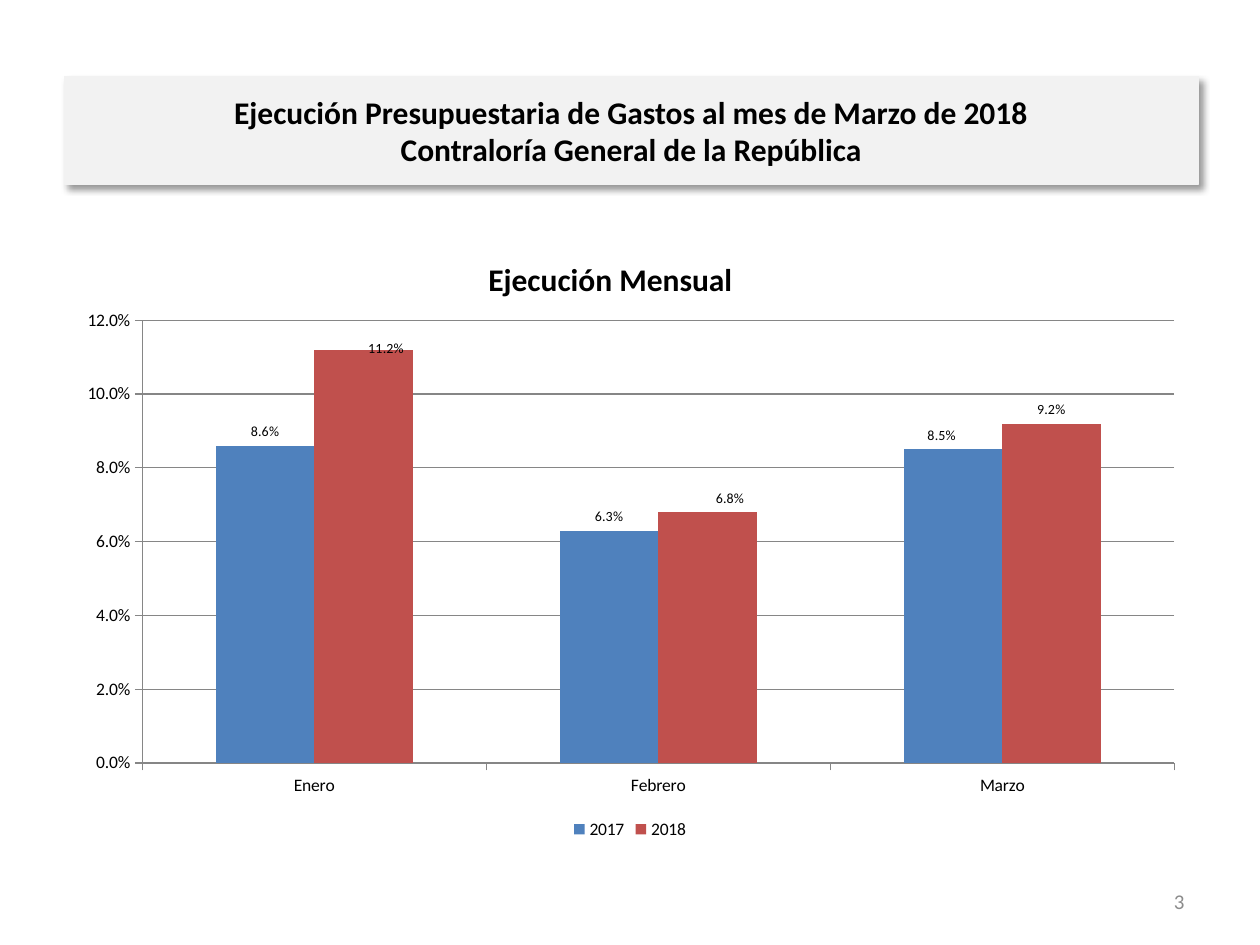
from dataclasses import dataclass, field

from lxml import etree
from pptx import Presentation
from pptx.chart.data import CategoryChartData
from pptx.dml.color import RGBColor
from pptx.enum import chart as ch, text
from pptx.oxml import parse_xml
from pptx.oxml.ns import nsdecls, qn
from pptx.util import Inches, Pt

FONT = "Calibri"
PERCENT = "0.0%"
BLACK = RGBColor(0x00, 0x00, 0x00)
GRAY = RGBColor(0x8C, 0x8C, 0x8C)
AXIS_GRAY = RGBColor(0x86, 0x86, 0x86)
PANEL = RGBColor(0xF2, 0xF2, 0xF2)
BLUE = RGBColor(0x4F, 0x81, 0xBD)
RED = RGBColor(0xC0, 0x50, 0x4D)
MONTHS = ["Enero", "Febrero", "Marzo"]


@dataclass
class YearSeries:
    name: str
    values: list[float]
    color: RGBColor
    label_shifts: dict[int, tuple[float, float]] = field(default_factory=dict)


YEARS = [
    YearSeries("2017", [0.086, 0.063, 0.085], BLUE, {2: (-0.01, 0)}),
    YearSeries("2018", [0.112, 0.068, 0.092], RED,
               {0: (0.02, 0.02), 1: (0.02, 0)}),
]


def style_font(font, size: float, color: RGBColor = BLACK, bold: bool = False) -> None:
    font.name = FONT
    font.size = Pt(size)
    font.bold = bold
    font.color.rgb = color


def manual_layout(**values):
    """Chart layout in fractions of the chart area."""
    layout = etree.Element(qn("c:layout"))
    manual = etree.SubElement(layout, qn("c:manualLayout"))
    for tag, value in values.items():
        etree.SubElement(manual, qn(f"c:{tag}")).set("val", str(value))
    return layout


def add_title(slide) -> None:
    sp = slide.shapes.title
    sp.left, sp.top, sp.width, sp.height = map(Inches, (0.51, 0.61, 9, 0.85))
    sp.fill.solid()
    sp.fill.fore_color.rgb = PANEL
    sp.line.color.rgb = PANEL
    sp.line.width = Pt(0.75)
    sp._element.spPr.append(parse_xml(
        f'<a:effectLst {nsdecls("a")}><a:outerShdw blurRad="{Pt(4)}" dist="{Pt(3)}" '
        'dir="2700000" algn="tl" rotWithShape="0"><a:srgbClr val="000000">'
        '<a:alpha val="40000"/></a:srgbClr></a:outerShdw></a:effectLst>'))
    tf = sp.text_frame
    tf.text = ("Ejecución Presupuestaria de Gastos al mes de Marzo de 2018\v"
               "Contraloría General de la República")
    tf.word_wrap = True
    tf.auto_size = text.MSO_AUTO_SIZE.NONE
    tf.vertical_anchor = text.MSO_ANCHOR.MIDDLE
    p = tf.paragraphs[0]
    p.alignment = text.PP_ALIGN.CENTER
    style_font(p.font, 18, bold=True)


def style_series(series, year: YearSeries) -> None:
    series.format.fill.solid()
    series.format.fill.fore_color.rgb = year.color
    series.invert_if_negative = False
    labels = series.data_labels
    labels.show_value = True
    labels.number_format = PERCENT
    labels.number_format_is_linked = False
    labels.position = ch.XL_LABEL_POSITION.OUTSIDE_END
    style_font(labels.font, 8)
    for i, (x, y) in year.label_shifts.items():
        label = series.points[i].data_label
        label.position = ch.XL_LABEL_POSITION.OUTSIDE_END
        style_font(label.font, 8)
        idx = labels._element.xpath(f"c:dLbl/c:idx[@val='{i}']")[0]
        idx.addnext(parse_xml(
            f'<c:numFmt {nsdecls("c")} formatCode="{PERCENT}" sourceLinked="0"/>'))
        idx.addnext(manual_layout(x=x, y=y))


def add_chart(slide) -> None:
    data = CategoryChartData(number_format=PERCENT)
    data.categories = MONTHS
    for year in YEARS:
        data.add_series(year.name, year.values)
    chart = slide.shapes.add_chart(
        ch.XL_CHART_TYPE.COLUMN_CLUSTERED, Inches(0.5), Inches(1.75),
        Inches(9), Inches(4.95), data).chart
    style_font(chart.font, 10)

    chart.has_title = True
    title = chart.chart_title
    title.text_frame.text = "Ejecución Mensual"
    style_font(title.text_frame.paragraphs[0].font, 18, bold=True)
    for old in title._element.findall(qn("c:layout")):
        title._element.remove(old)
    title._element.find(qn("c:tx")).addnext(
        manual_layout(xMode="edge", yMode="edge", x=0.37, y=0.05))
    title.include_in_layout = True

    chart.has_legend = True
    chart.legend.position = ch.XL_LEGEND_POSITION.BOTTOM
    chart.legend.include_in_layout = False
    style_font(chart.legend.font, 10)

    plot = chart.plots[0]
    plot.gap_width = 150
    plot.overlap = 0
    plot.vary_by_categories = False
    for series, year in zip(plot.series, YEARS):
        style_series(series, year)

    for axis in (chart.category_axis, chart.value_axis):
        axis.major_tick_mark = ch.XL_TICK_MARK.OUTSIDE
        axis.minor_tick_mark = ch.XL_TICK_MARK.NONE
        axis.format.line.color.rgb = AXIS_GRAY
        axis.format.line.width = Pt(0.75)
        style_font(axis.tick_labels.font, 10)
    axis = chart.value_axis
    axis.minimum_scale, axis.maximum_scale, axis.major_unit = 0, 0.12, 0.02
    axis.tick_labels.number_format = PERCENT
    axis.tick_labels.number_format_is_linked = False
    axis.has_major_gridlines = True
    axis.major_gridlines.format.line.color.rgb = AXIS_GRAY
    axis.major_gridlines.format.line.width = Pt(0.75)

    area = chart._chartSpace.chart.plotArea
    for old in area.findall(qn("c:layout")):
        area.remove(old)
    area.insert(0, manual_layout(layoutTarget="inner", xMode="edge", yMode="edge",
                                 x=0.07, y=0.16, w=0.91, h=0.71))


def add_page_number(slide) -> None:
    box = slide.shapes.add_textbox(Inches(7.17), Inches(6.95), Inches(2.33), Inches(0.4))
    tf = box.text_frame
    tf.word_wrap = True
    tf.vertical_anchor = text.MSO_ANCHOR.MIDDLE
    p = tf.paragraphs[0]
    p.text = "3"
    p.alignment = text.PP_ALIGN.RIGHT
    style_font(p.font, 12, GRAY)


def main() -> None:
    prs = Presentation()
    prs.slide_width, prs.slide_height = Inches(10), Inches(7.5)
    slide = prs.slides.add_slide(prs.slide_layouts[5])
    add_page_number(slide)
    add_title(slide)
    add_chart(slide)
    prs.save("out.pptx")


if __name__ == "__main__":
    main()
